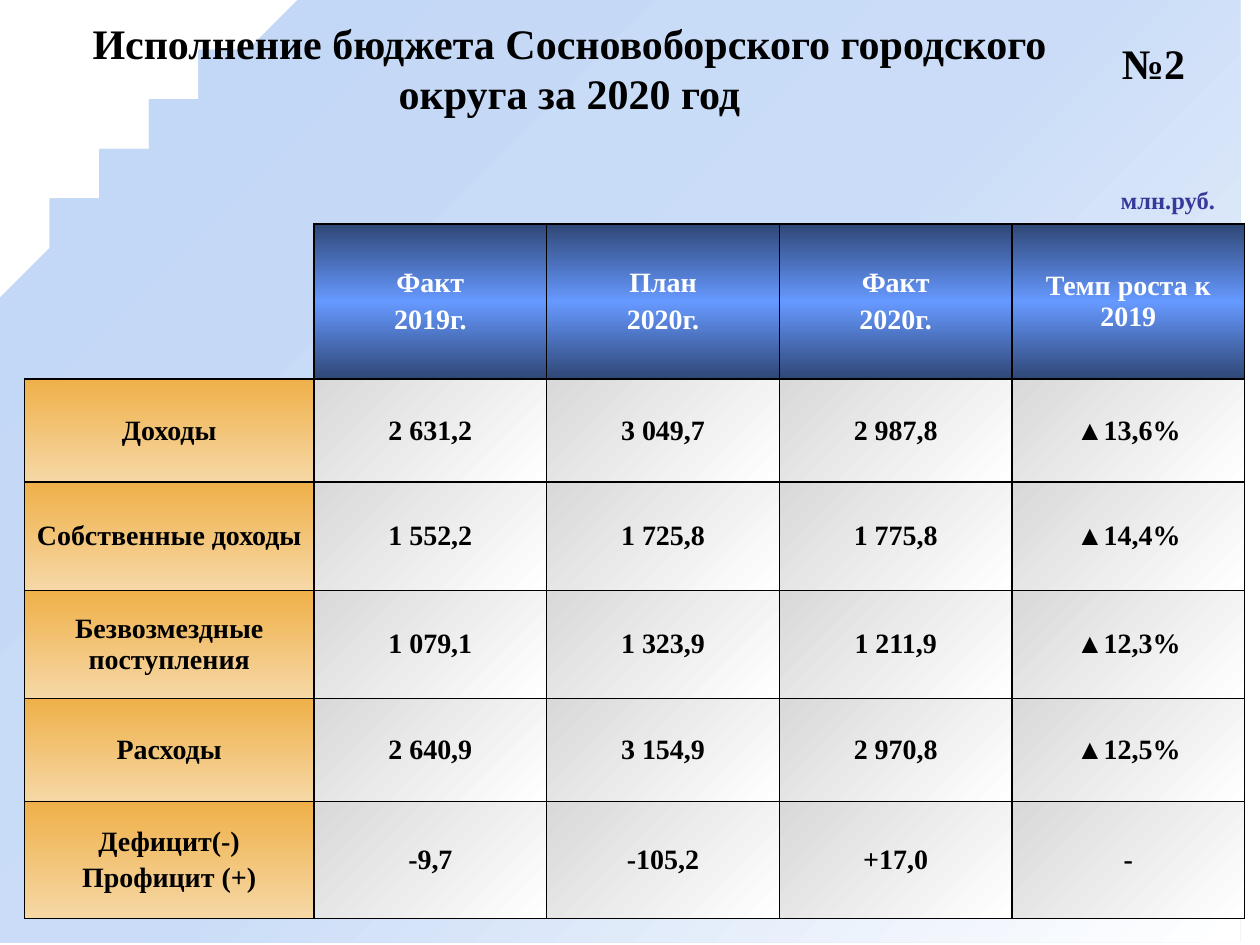
from lxml.etree import SubElement
from pptx import Presentation
from pptx.dml.color import RGBColor
from pptx.enum.text import MSO_ANCHOR, MSO_AUTO_SIZE, PP_ALIGN
from pptx.oxml.ns import qn
from pptx.util import Cm, Pt

COLORS = {
    "text": "000000", "header_text": "FFFFFF", "unit": "37399B", "border": "000000",
    "header_edge": "2F4776", "header_mid": "6699FF",
    "label_top": "EFB049", "label_bottom": "F6D8A6",
    "value_start": "D9D9D9", "value_end": "FFFFFF",
    "back_start": "C0D6F5", "back_mid": "CADCF7", "back_end": "FFFFFF",
}
# Each gradient: angle in degrees, then evenly spaced colours
GRADIENTS = {
    "back": (45, ["back_start", "back_mid", "back_end"]),
    "header": (90, ["header_edge", "header_mid", "header_edge"]),
    "label": (90, ["label_top", "label_bottom"]),
    "value": (45, ["value_start", "value_end"]),
}
FONT = "Times New Roman"
COL_WIDTHS = [5.84] + [4.69] * 4
ROW_HEIGHTS = [3.12, 2.08, 2.18, 2.18, 2.08, 2.36]
ROWS = [
    ["", "Факт\n2019г.", "План\n2020г.", "Факт\n2020г.", "Темп роста к 2019"],
    ["Доходы", "2 631,2", "3 049,7", "2 987,8", "▲13,6%"],
    ["Собственные доходы", "1 552,2", "1 725,8", "1 775,8", "▲14,4%"],
    ["Безвозмездные поступления", "1 079,1", "1 323,9", "1 211,9", "▲12,3%"],
    ["Расходы", "2 640,9", "3 154,9", "2 970,8", "▲12,5%"],
    ["Дефицит(-)\nПрофицит (+)", "-9,7", "-105,2", "+17,0", "-"],
]
# Background outline in cm: start point, then Bezier segments
CURVE_START = (6.55, 0)
CURVES = [
    [(4.83, 0.41), (2.95, 2.11), (2.49, 2.72)],
    [(2.03, 3.35), (0.41, 4.93), (0, 7.65)],
]


def set_gradient(fill, parent, name):
    """Fill with a named gradient; parent is the element that holds the fill."""
    angle, names = GRADIENTS[name]
    fill.gradient()
    grad = parent.find(qn("a:gradFill"))
    for child in list(grad):
        grad.remove(child)
    stops = SubElement(grad, qn("a:gsLst"))
    for i, color in enumerate(names):
        stop = SubElement(stops, qn("a:gs"), pos=str(100000 * i // (len(names) - 1)))
        SubElement(stop, qn("a:srgbClr"), val=COLORS[color])
    SubElement(grad, qn("a:lin"), ang=str(angle * 60000), scaled="0")


def add_run(p, text, size, color, bold=True):
    r = p.add_run()
    r.text = text
    for name, value in {"name": FONT, "size": Pt(size), "bold": bold}.items():
        setattr(r.font, name, value)
    r.font.color.rgb = RGBColor.from_string(COLORS[color])


def write_text(tf, text, size, color):
    """Write centred lines; a growth mark stays in regular weight."""
    for i, line in enumerate(text.split("\n")):
        p = tf.add_paragraph() if i else tf.paragraphs[0]
        p.alignment = PP_ALIGN.CENTER
        p.space_before = Pt(3 if i else 0)
        if line.startswith("▲"):
            add_run(p, "▲", size, color, bold=False)
            line = line[1:]
        add_run(p, line, size, color)


def fill_box(s, box, text, size, color):
    for name, value in zip(("left", "top", "width", "height"), box):
        setattr(s, name, Cm(value))
    tf = s.text_frame
    formats = {"word_wrap": True, "auto_size": MSO_AUTO_SIZE.NONE,
               "vertical_anchor": MSO_ANCHOR.MIDDLE}
    for name, value in formats.items():
        setattr(tf, name, value)
    write_text(tf, text, size, color)


def add_label(slide, box, text, size, color):
    fill_box(slide.shapes.add_textbox(0, 0, 0, 0), box, text, size, color)


def bezier(p0, p1, p2, p3, steps=16):
    for i in range(1, steps + 1):
        t = i / steps
        u = 1 - t
        yield tuple(u**3 * a + 3 * u * u * t * b + 3 * u * t * t * c + t**3 * d
                    for a, b, c, d in zip(p0, p1, p2, p3))


def add_background(slide):
    points, start = [], CURVE_START
    for curve in CURVES:
        points.extend(bezier(start, *curve))
        start = curve[-1]
    points += [(0, 19.05), (25.4, 19.05), (25.4, 0)]
    builder = slide.shapes.build_freeform(*CURVE_START, scale=Cm(1))
    builder.add_line_segments(points, close=True)
    s = builder.convert_to_shape()
    s.shadow.inherit = False
    s.line.fill.background()
    set_gradient(s.fill, s._element.spPr, "back")
    slide.shapes._spTree.insert(2, s._element)


def set_borders(cell, sides):
    tc_pr = cell._tc.get_or_add_tcPr()
    for side in "LRTB":
        width = Pt(1) if side in sides else 0
        ln = SubElement(tc_pr, qn(f"a:ln{side}"), w=str(width))
        if side in sides:
            solid = SubElement(ln, qn("a:solidFill"))
            SubElement(solid, qn("a:srgbClr"), val=COLORS["border"])
        else:
            SubElement(ln, qn("a:noFill"))


def format_cell(cell, text, row, col):
    cell.vertical_anchor = MSO_ANCHOR.MIDDLE
    cell.margin_left = cell.margin_right = Cm(0.2)
    if row == col == 0:
        set_borders(cell, "RB")
        cell.fill.background()
        return
    set_borders(cell, "LRTB")
    kind = "header" if row == 0 else "label" if col == 0 else "value"
    set_gradient(cell.fill, cell._tc.tcPr, kind)
    write_text(cell.text_frame, text, 16, "header_text" if row == 0 else "text")


def add_budget_table(slide):
    frame = slide.shapes.add_table(
        len(ROWS), len(COL_WIDTHS), Cm(0.49), Cm(4.52),
        Cm(sum(COL_WIDTHS)), Cm(sum(ROW_HEIGHTS)))
    table = frame.table
    table.first_row = table.horz_banding = False
    for column, width in zip(table.columns, COL_WIDTHS):
        column.width = Cm(width)
    for i, (height, texts) in enumerate(zip(ROW_HEIGHTS, ROWS)):
        table.rows[i].height = Cm(height)
        for j, text in enumerate(texts):
            format_cell(table.cell(i, j), text, i, j)


def main():
    prs = Presentation()
    prs.slide_width, prs.slide_height = Cm(25.4), Cm(19.05)
    slide = prs.slides.add_slide(prs.slide_layouts[5])
    add_background(slide)
    fill_box(slide.shapes.title, (1.27, 0.53, 20.42, 1.68),
             "Исполнение бюджета Сосновоборского городского округа за 2020 год",
             24, "text")
    add_label(slide, (21.11, 0, 4.29, 2.51), "№2", 24, "text")
    add_budget_table(slide)
    add_label(slide, (21.69, 3.53, 3.71, 0.99), "млн.руб.", 14, "unit")
    prs.save("out.pptx")


if __name__ == "__main__":
    main()
